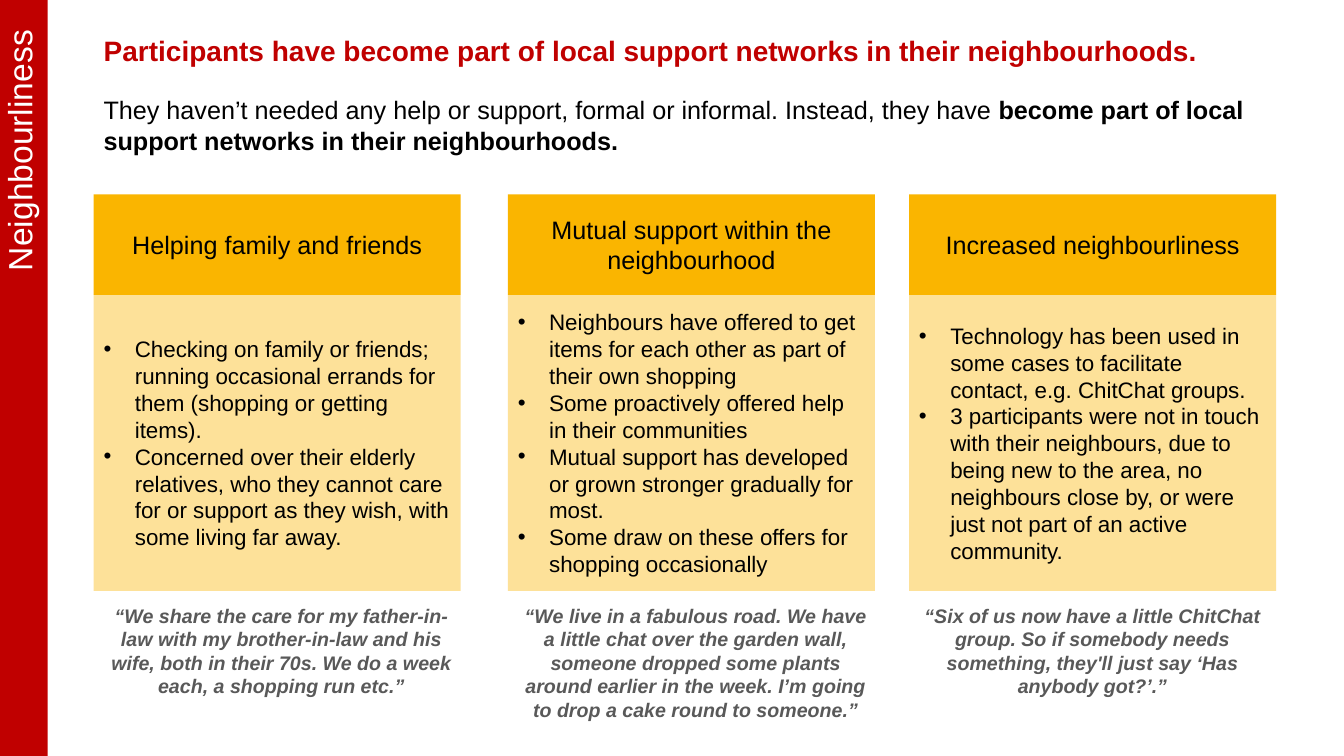
from lxml.etree import SubElement
from pptx import Presentation
from pptx.dml.color import RGBColor
from pptx.enum.shapes import MSO_SHAPE
from pptx.enum.text import MSO_ANCHOR, MSO_AUTO_SIZE, PP_ALIGN
from pptx.oxml.ns import qn
from pptx.util import Cm, Pt

RED = RGBColor(0xC0, 0x00, 0x00)
AMBER = RGBColor(0xFA, 0xB5, 0x00)
GREY = RGBColor(0x59, 0x59, 0x59)
BLACK = RGBColor(0x00, 0x00, 0x00)
WHITE = RGBColor(0xFF, 0xFF, 0xFF)
FONT = "Arial"

# Content
SECTION = "Neighbourliness"
HEADLINE = "Participants have become part of local support networks in their neighbourhoods."
INTRO = "They haven’t needed any help or support, formal or informal. Instead, they have "
INTRO_BOLD = "become part of local support networks in their neighbourhoods."
# Each column: left edge in cm, quote width in cm, heading, points, quote
COLUMNS = [
    (2.36, 9.47, "Helping family and friends",
     ["Checking on family or friends; running occasional errands for them "
      "(shopping or getting items).",
      "Concerned over their elderly relatives, who they cannot care for or "
      "support as they wish, with some living far away."],
     "“We share the care for my father-in-law with my brother-in-law and his wife, "
     "both in their 70s. We do a week each, a shopping run etc.”"),
    (12.8, 9.47, "Mutual support within the neighbourhood",
     ["Neighbours have offered to get items for each other as part of their own shopping",
      "Some proactively offered help in their communities",
      "Mutual support has developed or grown stronger gradually for most.",
      "Some draw on these offers for shopping occasionally"],
     "“We live in a fabulous road. We have a little chat over the garden wall, "
     "someone dropped some plants around earlier in the week. "
     "I’m going to drop a cake round to someone.”"),
    (22.91, 9.25, "Increased neighbourliness",
     ["Technology has been used in some cases to facilitate contact, "
      "e.g. ChitChat groups.",
      "3 participants were not in touch with their neighbours, due to being new to "
      "the area, no neighbours close by, or were just not part of an active community."],
     "“Six of us now have a little ChitChat group. So if somebody needs something, "
     "they'll just say ‘Has anybody got?’.”"),
]

# Layout in cm
PAGE_HEIGHT = 19.05
TEXT_LEFT, TEXT_WIDTH = 2.36, 29.31
CARD_WIDTH = 9.25
HEADING_TOP, HEADING_HEIGHT = 4.9, 2.53
POINTS_TOP, POINTS_HEIGHT = HEADING_TOP + HEADING_HEIGHT, 7.46
QUOTE_TOP, QUOTE_HEIGHT = 15.09, 2.64
BULLET_INDENT = 0.79


def add_run(para, text, size, color, bold=False, italic=False):
    span = para.add_run()
    span.text = text
    span.font.name = FONT
    span.font.size = Pt(size)
    span.font.color.rgb = color
    span.font.bold = bold
    span.font.italic = italic


def add_block(page, left, top, width, height, color, opacity=None):
    block = page.shapes.add_shape(
        MSO_SHAPE.RECTANGLE, Cm(left), Cm(top), Cm(width), Cm(height))
    block.shadow.inherit = False
    block.fill.solid()
    block.fill.fore_color.rgb = color
    block.line.fill.background()
    if opacity is not None:
        tint = block.fill._xPr.find(qn("a:solidFill"))[0]
        SubElement(tint, qn("a:alpha")).set("val", str(opacity * 1000))
    block.text_frame.word_wrap = True
    block.text_frame.vertical_anchor = MSO_ANCHOR.MIDDLE
    return block


def add_text_box(page, left, top, width, height):
    box = page.shapes.add_textbox(Cm(left), Cm(top), Cm(width), Cm(height))
    box.text_frame.word_wrap = True
    return box


def add_bullet(para):
    props = para._p.get_or_add_pPr()
    props.set("marL", str(Cm(BULLET_INDENT)))
    props.set("indent", str(-Cm(BULLET_INDENT)))
    SubElement(props, qn("a:buFont")).set("typeface", FONT)
    SubElement(props, qn("a:buChar")).set("char", "•")


deck = Presentation()
deck.slide_width, deck.slide_height = Cm(33.87), Cm(PAGE_HEIGHT)
page = deck.slides.add_slide(deck.slide_layouts[5])

# Section bar with upright label
bar = add_block(page, 0, 0, 1.2, PAGE_HEIGHT, RED)
frame = bar.text_frame
frame.margin_left, frame.margin_top = Cm(0.18), Cm(0.76)
frame.margin_right, frame.margin_bottom = Cm(0.3), Cm(0)
frame._txBody.bodyPr.set("vert", "vert270")
para = frame.paragraphs[0]
para.alignment = PP_ALIGN.RIGHT
para.line_spacing = 0.9
add_run(para, SECTION, 24, WHITE)

# Headline
title = page.shapes.title
title.left, title.top = Cm(TEXT_LEFT), Cm(0.71)
title.width, title.height = Cm(TEXT_WIDTH), Cm(1.1)
title.text_frame.auto_size = MSO_AUTO_SIZE.NONE
title.text_frame.vertical_anchor = MSO_ANCHOR.TOP
para = title.text_frame.paragraphs[0]
para.alignment = PP_ALIGN.LEFT
add_run(para, HEADLINE, 20, RED, bold=True)

# Introduction
intro = add_text_box(page, TEXT_LEFT, 2.26, TEXT_WIDTH, 1.8)
para = intro.text_frame.paragraphs[0]
add_run(para, INTRO, 18, BLACK)
add_run(para, INTRO_BOLD, 18, BLACK, bold=True)

# Three columns: heading, points, quote
for left, quote_width, heading, points, quote in COLUMNS:
    card = add_block(page, left, POINTS_TOP, CARD_WIDTH, POINTS_HEIGHT, AMBER, opacity=40)
    for number, point in enumerate(points):
        frame = card.text_frame
        para = frame.add_paragraph() if number else frame.paragraphs[0]
        para.alignment = PP_ALIGN.LEFT
        add_bullet(para)
        add_run(para, point, 16, BLACK)

    header = add_block(page, left, HEADING_TOP, CARD_WIDTH, HEADING_HEIGHT, AMBER)
    para = header.text_frame.paragraphs[0]
    para.alignment = PP_ALIGN.CENTER
    add_run(para, heading, 18, BLACK)

    box = add_text_box(page, left, QUOTE_TOP, quote_width, QUOTE_HEIGHT)
    para = box.text_frame.paragraphs[0]
    para.alignment = PP_ALIGN.CENTER
    add_run(para, quote, 14, GREY, bold=True, italic=True)

deck.save("out.pptx")
